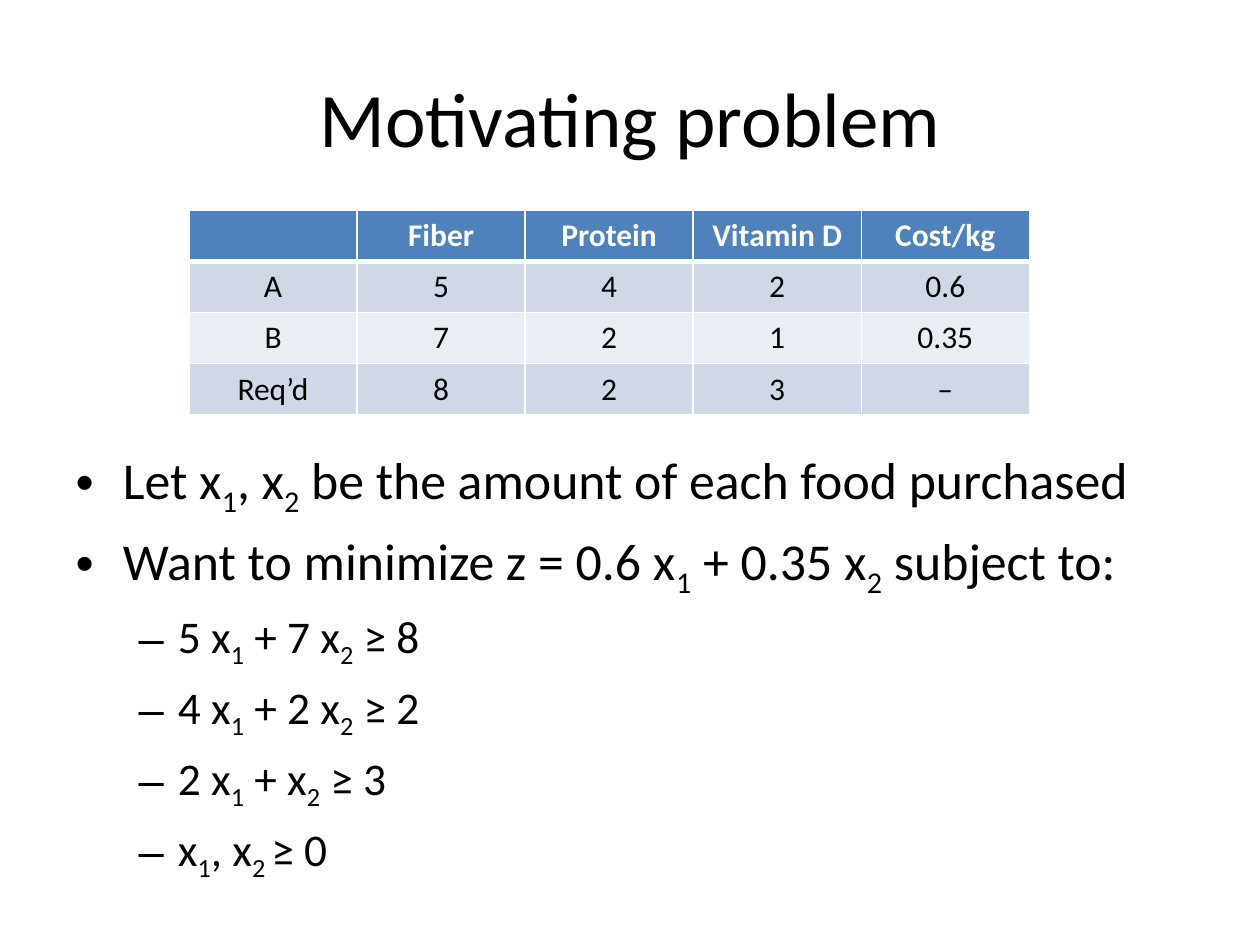
from dataclasses import dataclass

from lxml import etree
from pptx import Presentation
from pptx import util as u
from pptx.dml.color import RGBColor
from pptx.enum import text
from pptx.oxml import ns

FONT = "Calibri"
COLOURS = {
    "ink": "000000",
    "white": "FFFFFF",
    "header": "4F81BD",
    "odd row": "D0D8E8",
    "even row": "E9EDF4",
}


@dataclass
class Line:
    """One list line; text between bars is set as a subscript."""
    wording: str
    level: int = 0


LIST_SIZES = {0: 29.6, 1: 25.9}
LINES = [
    Line("Let x|1|, x|2| be the amount of each food purchased"),
    Line("Want to minimize z = 0.6 x|1| + 0.35 x|2| subject to:"),
    Line("5 x|1| + 7 x|2| ≥ 8", 1),
    Line("4 x|1| + 2 x|2| ≥ 2", 1),
    Line("2 x|1| + x|2| ≥ 3", 1),
    Line("x|1|, x|2 |≥ 0", 1),
]
FOODS = [
    ["", "Fiber", "Protein", "Vitamin D", "Cost/kg"],
    ["A", "5", "4", "2", "0.6"],
    ["B", "7", "2", "1", "0.35"],
    ["Req’d", "8", "2", "3", "–"],
]


def colour(name: str) -> RGBColor:
    return RGBColor.from_string(COLOURS[name])


def place(box, left: float, top: float, width: float, height: float) -> None:
    box.left, box.top = u.Inches(left), u.Inches(top)
    box.width, box.height = u.Inches(width), u.Inches(height)


def style(para, size: float, ink: str = "ink", bold: bool = False) -> None:
    para.font.name = FONT
    para.font.size = u.Pt(size)
    para.font.bold = bold
    para.font.color.rgb = colour(ink)


def add_line(para, line: Line) -> None:
    para.level = line.level
    style(para, LIST_SIZES[line.level])
    for index, wording in enumerate(line.wording.split("|")):
        span = para.add_run()
        span.text = wording
        if index % 2:
            span.font._element.set("baseline", "-25000")


def set_borders(cell, widths: dict[str, float]) -> None:
    """Give the cell white borders, with widths in points by side."""
    properties = cell._tc.get_or_add_tcPr()
    for index, (side, width) in enumerate(widths.items()):
        border = etree.Element(ns.qn(f"a:ln{side}"), w=str(u.Pt(width)))
        fill = etree.SubElement(border, ns.qn("a:solidFill"))
        etree.SubElement(fill, ns.qn("a:srgbClr"), val=COLOURS["white"])
        properties.insert(index, border)


def fill_cell(cell, wording: str, row: int) -> None:
    header = row == 0
    para = cell.text_frame.paragraphs[0]
    para.text = wording
    para.alignment = text.PP_ALIGN.CENTER
    style(para, 18, "white" if header else "ink", header)
    cell.fill.solid()
    cell.fill.fore_color.rgb = colour(
        "header" if header else "odd row" if row % 2 else "even row")
    set_borders(cell, {"L": 1, "R": 1, "T": 3 if row == 1 else 1,
                       "B": 3 if header else 1})


def main() -> None:
    deck = Presentation()
    deck.slide_width, deck.slide_height = u.Inches(10), u.Inches(7.5)
    page = deck.slides.add_slide(deck.slide_layouts[1])

    # Title
    title = page.shapes.title
    place(title, 0.5, 0.3, 9, 1.25)
    title.text_frame.text = "Motivating problem"
    style(title.text_frame.paragraphs[0], 44)

    # List, with its top inset leaving room for the table
    body = page.placeholders[1]
    place(body, 0.5, 1.75, 9, 4.95)
    frame = body.text_frame
    frame.auto_size = text.MSO_AUTO_SIZE.NONE
    frame.margin_top = u.Inches(1.8)
    for index, line in enumerate(LINES):
        add_line(frame.add_paragraph() if index else frame.paragraphs[0], line)

    # Food table
    table = page.shapes.add_table(
        len(FOODS), len(FOODS[0]), u.Inches(1.5), u.Inches(1.67),
        u.Inches(6.67), u.Inches(1.62)).table
    for row, wordings in enumerate(FOODS):
        for column, wording in enumerate(wordings):
            fill_cell(table.cell(row, column), wording, row)

    deck.save("out.pptx")


if __name__ == "__main__":
    main()
